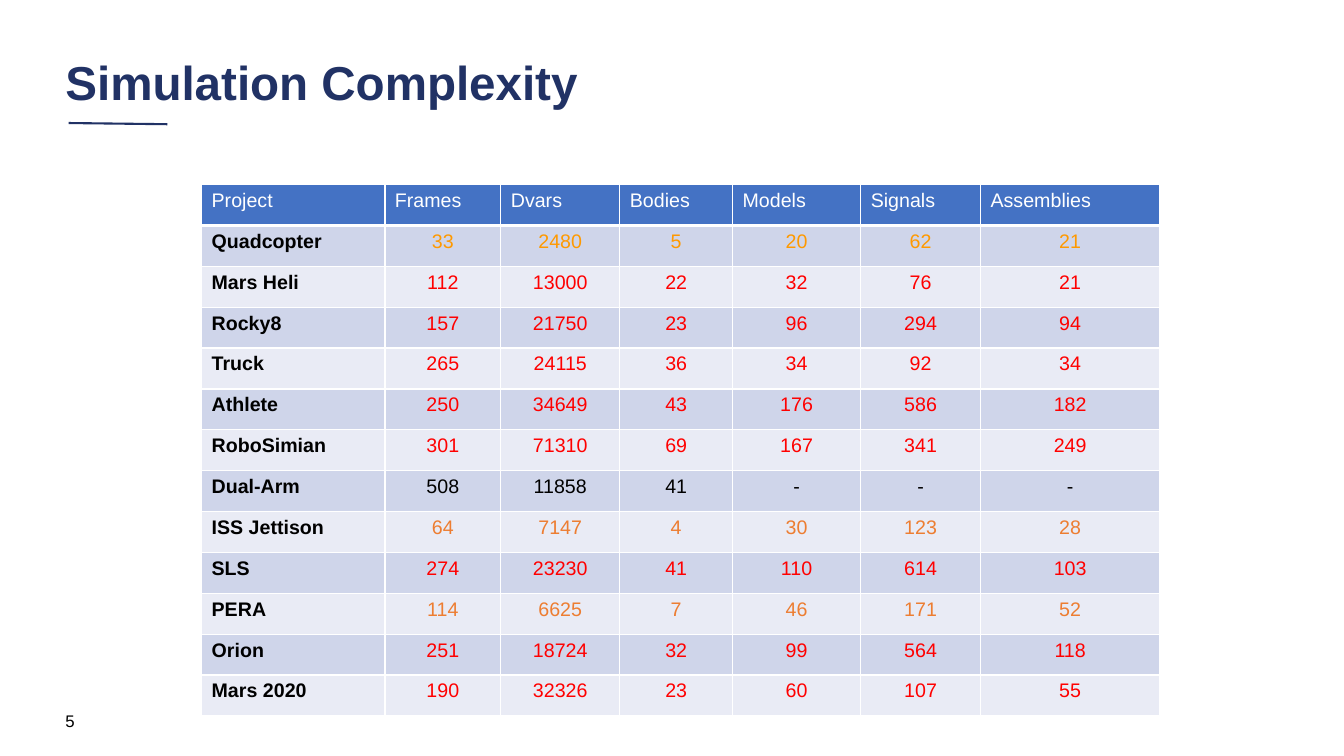
from typing import NamedTuple

from lxml.etree import SubElement
from pptx import Presentation
from pptx.dml.color import RGBColor
from pptx.enum.shapes import MSO_CONNECTOR as Connector
from pptx.enum.text import MSO_ANCHOR as Anchor, PP_ALIGN as Align
from pptx.oxml.ns import qn
from pptx.util import Cm, Pt

FONT = "Arial"
NAVY, BLACK, WHITE = "213265", "000000", "FFFFFF"
RED, AMBER, ORANGE = "FF0000", "FF9900", "ED7D31"
HEADER_FILL = "4472C4"
BAND_FILLS = ("CFD5EA", "E9EBF5")

HEADINGS = ("Project", "Frames", "Dvars", "Bodies", "Models", "Signals", "Assemblies")
COLUMN_WIDTHS = (4.62, 2.92, 3, 2.84, 3.23, 3.02, 4.52)
ROW_HEIGHT = 1.03


class Project(NamedTuple):
    name: str
    counts: str
    color: str


class Label(NamedTuple):
    text: str
    left: float
    top: float
    width: float
    height: float
    size: int
    color: str
    bold: bool
    line_spacing: float


PROJECTS = (
    Project("Quadcopter", "33 2480 5 20 62 21", AMBER),
    Project("Mars Heli", "112 13000 22 32 76 21", RED),
    Project("Rocky8", "157 21750 23 96 294 94", RED),
    Project("Truck", "265 24115 36 34 92 34", RED),
    Project("Athlete", "250 34649 43 176 586 182", RED),
    Project("RoboSimian", "301 71310 69 167 341 249", RED),
    Project("Dual-Arm", "508 11858 41 - - -", BLACK),
    Project("ISS Jettison", "64 7147 4 30 123 28", ORANGE),
    Project("SLS", "274 23230 41 110 614 103", RED),
    Project("PERA", "114 6625 7 46 171 52", ORANGE),
    Project("Orion", "251 18724 32 99 564 118", RED),
    Project("Mars 2020", "190 32326 23 60 107 55", RED),
)

LABELS = (
    Label("Simulation Complexity", 1.4, 1.17, 28.24, 1.93, 34, NAVY, True, 0.9),
    Label("5", 1.4, 17.65, 7.62, 1.02, 12, BLACK, False, 1.0),
)


def rgb(color: str) -> RGBColor:
    return RGBColor.from_string(color)


def style_text(para, size: int, color: str, bold: bool) -> None:
    for span in para.runs:
        span.font.name = FONT
        span.font.size = Pt(size)
        span.font.bold = bold
        span.font.color.rgb = rgb(color)


def add_label(page, label: Label) -> None:
    box = page.shapes.add_textbox(
        Cm(label.left), Cm(label.top), Cm(label.width), Cm(label.height))
    frame = box.text_frame
    frame.word_wrap = True
    frame.vertical_anchor = Anchor.MIDDLE
    frame.text = label.text
    para = frame.paragraphs[0]
    para.line_spacing = label.line_spacing
    style_text(para, label.size, label.color, label.bold)


def add_underline(page) -> None:
    line = page.shapes.add_connector(
        Connector.STRAIGHT, Cm(1.73), Cm(3.1), Cm(4.22), Cm(3.13))
    line.line.color.rgb = rgb(NAVY)
    line.line.width = Pt(1.5)
    SubElement(line._element.spPr, qn("a:effectLst"))


def set_borders(cell, bottom: float) -> None:
    properties = cell._tc.get_or_add_tcPr()
    for side, width in (("L", 1), ("R", 1), ("T", 1), ("B", bottom)):
        edge = SubElement(properties, qn(f"a:ln{side}"), w=str(Pt(width)))
        fill = SubElement(edge, qn("a:solidFill"))
        SubElement(fill, qn("a:srgbClr"), val=WHITE)


def fill_cell(cell, text: str, fill: str, color: str, bold: bool = False,
              align: Align = Align.LEFT, bottom: float = 1) -> None:
    set_borders(cell, bottom)
    cell.fill.solid()
    cell.fill.fore_color.rgb = rgb(fill)
    cell.text_frame.text = text
    para = cell.text_frame.paragraphs[0]
    para.alignment = align
    style_text(para, 14, color, bold)


def add_complexity_table(page) -> None:
    row_count = len(PROJECTS) + 1
    table = page.shapes.add_table(
        row_count, len(HEADINGS), Cm(5.08), Cm(4.65),
        Cm(sum(COLUMN_WIDTHS)), Cm(ROW_HEIGHT * row_count)).table
    for column, width in zip(table.columns, COLUMN_WIDTHS):
        column.width = Cm(width)
    for row in table.rows:
        row.height = Cm(ROW_HEIGHT)

    # Header row
    for column, heading in enumerate(HEADINGS):
        fill_cell(table.cell(0, column), heading, HEADER_FILL, WHITE, bottom=3)

    # One banded row per project
    for index, project in enumerate(PROJECTS):
        band = BAND_FILLS[index % 2]
        fill_cell(table.cell(index + 1, 0), project.name, band, BLACK, bold=True)
        for column, count in enumerate(project.counts.split(), start=1):
            fill_cell(table.cell(index + 1, column), count, band,
                      project.color, align=Align.CENTER)


def main() -> None:
    deck = Presentation()
    deck.slide_width, deck.slide_height = Cm(33.87), Cm(19.05)
    page = deck.slides.add_slide(deck.slide_layouts[6])

    # Title, rule and page number
    add_underline(page)
    for label in LABELS:
        add_label(page, label)

    # Project figures
    add_complexity_table(page)
    deck.save("out.pptx")


if __name__ == "__main__":
    main()
